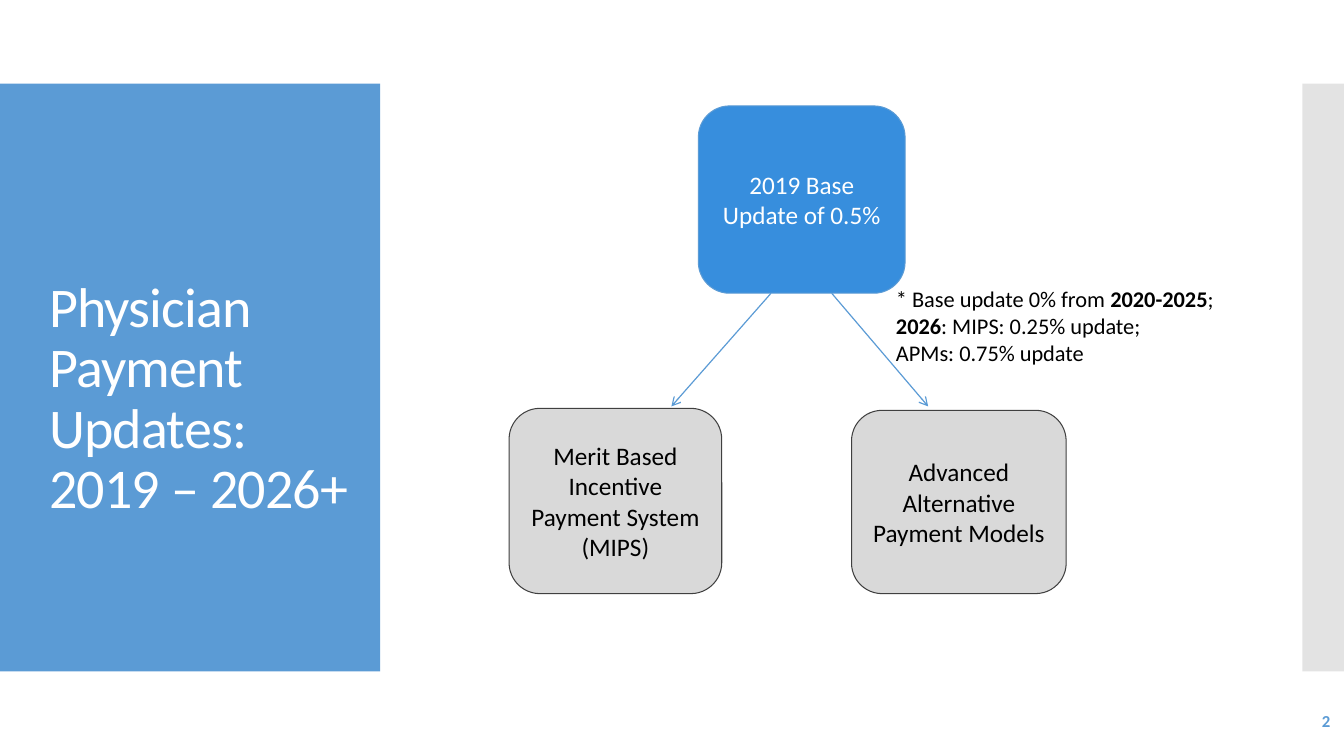
from lxml.etree import SubElement
from pptx import Presentation
from pptx.dml.color import RGBColor
from pptx.enum.shapes import MSO_CONNECTOR, MSO_SHAPE
from pptx.enum.text import MSO_ANCHOR, MSO_AUTO_SIZE, PP_ALIGN
from pptx.oxml.ns import qn
from pptx.util import Cm, Pt

BLUE, WHITE, BLACK = "5B9BD5", "FFFFFF", "000000"


def paint(target, color):
    """Give a fill, line or font a solid colour."""
    if hasattr(target, "solid"):
        target.solid()
        target.fore_color.rgb = RGBColor.from_string(color)
    else:
        target.color.rgb = RGBColor.from_string(color)


def apply(target, values):
    for name, value in values.items():
        setattr(target, name, value)


class Deck:
    face = "Calibri"
    frame = {"word_wrap": True, "auto_size": MSO_AUTO_SIZE.NONE,
             "vertical_anchor": MSO_ANCHOR.MIDDLE}

    def __init__(self):
        self.prs = Presentation()
        apply(self.prs, {"slide_width": Cm(33.87), "slide_height": Cm(19.05)})
        self.slide = self.prs.slides.add_slide(self.prs.slide_layouts[5])
        self.shapes = self.slide.shapes

    def letter(self, shape, paras, size, color, align=PP_ALIGN.LEFT,
               bold=False, **frame):
        """Fill a shape; a paragraph is a list of (text, bold) or a string."""
        text = shape.text_frame
        apply(text, self.frame | frame)
        for i, runs in enumerate(paras):
            para = text.add_paragraph() if i else text.paragraphs[0]
            para.alignment = align
            for words, strong in [(runs, bold)] if isinstance(runs, str) else runs:
                for j, line in enumerate(words.split("\n")):
                    if j:
                        para.add_line_break()
                    run = para.add_run()
                    run.text = line
                    apply(run.font, {"name": self.face, "size": Pt(size),
                                     "bold": strong})
                    paint(run.font, color)

    def block(self, kind, box, fill, edge=None, alpha=None):
        shape = self.shapes.add_shape(kind, *map(Cm, box))
        shape.shadow.inherit = False
        paint(shape.fill, fill)
        if edge:
            paint(shape.line, edge)
            shape.line.width = Pt(0.75)
        else:
            shape.line.fill.background()
        if alpha:
            color = shape._element.spPr.find(qn("a:solidFill"))[0]
            SubElement(color, qn("a:alpha"), val=str(alpha * 1000))
        return shape

    def node(self, box, fill, edge, color, *paras):
        shape = self.block(MSO_SHAPE.ROUNDED_RECTANGLE, box, fill, edge)
        self.letter(shape, paras, 18, color, PP_ALIGN.CENTER)

    def arrow(self, *ends):
        line = self.shapes.add_connector(MSO_CONNECTOR.STRAIGHT, *map(Cm, ends))
        paint(line.line, BLUE)
        line.line.width = Pt(0.85)
        props = line._element.spPr
        SubElement(props.find(qn("a:ln")), qn("a:tailEnd"), type="arrow")
        SubElement(props, qn("a:effectLst"))

    def label(self, box, paras, size, color, **style):
        shape = self.shapes.add_textbox(*map(Cm, box))
        self.letter(shape, paras, size, color, **style)

    def title(self, box, words, size, color):
        shape = self.shapes.title
        apply(shape, dict(zip(("left", "top", "width", "height"), map(Cm, box))))
        self.letter(shape, [words], size, color)
        para = shape.text_frame.paragraphs[0]
        para.line_spacing = 0.9
        for run in para.runs:
            run._r.get_or_add_rPr().set("spc", "-60")
        # Bring above the panel
        self.shapes._spTree.append(shape._element)


def main():
    deck = Deck()

    # Side panels
    deck.block(MSO_SHAPE.RECTANGLE, (0, 2.11, 9.58, 14.81), BLUE)
    deck.block(MSO_SHAPE.RECTANGLE, (32.82, 2.11, 1.05, 14.81), "C8C8C8", alpha=50)

    # Base update and its two paths
    deck.node((17.6, 2.67, 5.21, 4.72), "378EDD", BLUE, WHITE,
              "2019 Base Update of 0.5%")
    deck.arrow(20.96, 7.39, 23.39, 10.24)
    deck.arrow(19.43, 7.39, 16.92, 10.24)
    gray = "D9D9D9", "404040", BLACK
    deck.node((12.83, 10.29, 5.36, 4.67), *gray,
              "Merit Based Incentive Payment System", "(MIPS)")
    deck.node((21.46, 10.34, 5.41, 4.62), *gray,
              "Advanced", "Alternative Payment Models")

    # Note on later years
    note = [("* Base update 0% from ", False), ("2020-2025", True), ("; ", False),
            ("2026", True), (": MIPS: 0.25% update; \nAPMs: 0.75% update", False)]
    deck.label((22.33, 7.06, 9.09, 2.31), [note], 16, BLACK,
               vertical_anchor=MSO_ANCHOR.TOP)

    # Title and page number
    deck.title((0.99, 6.07, 8.13, 8), "Physician Payment Updates: \n2019 – 2026+",
               40, WHITE)
    deck.label((29.54, 17.65, 4.24, 1.02), ["2"], 12, BLUE,
               align=PP_ALIGN.RIGHT, bold=True)

    deck.prs.save("out.pptx")


if __name__ == "__main__":
    main()
